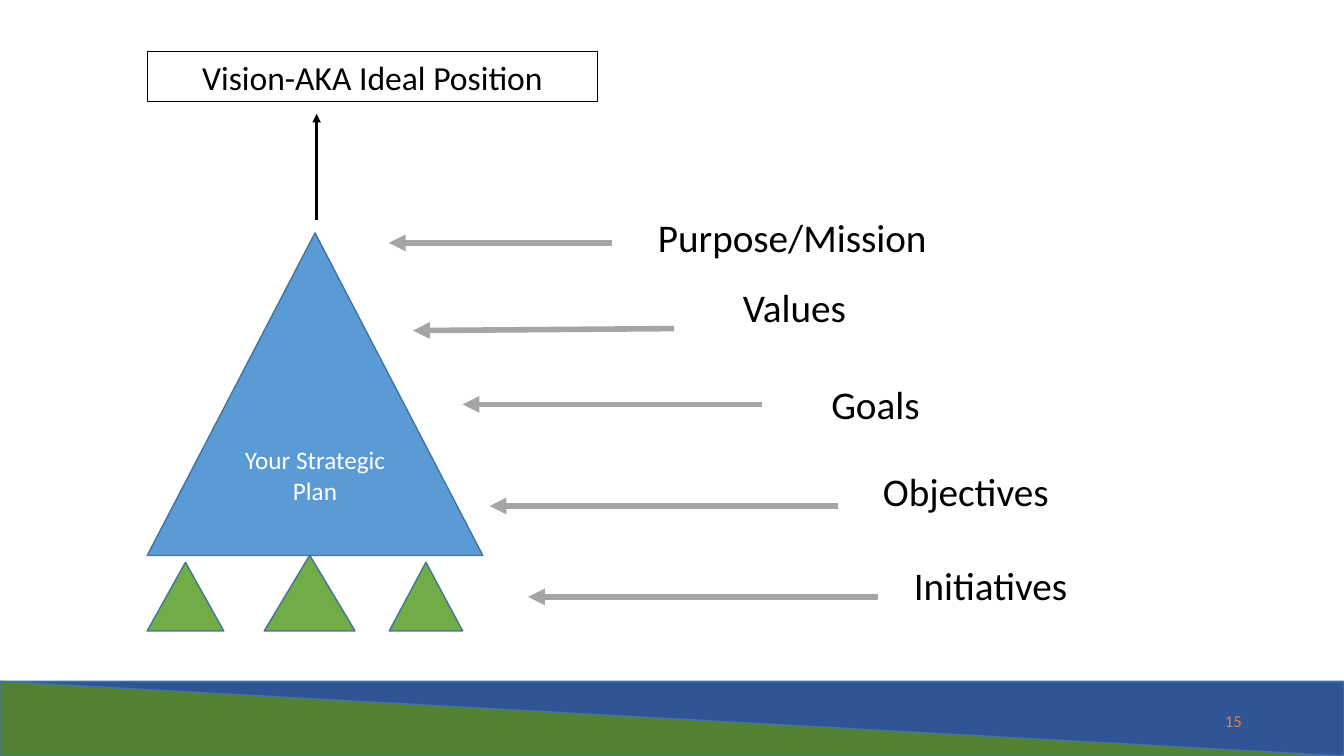
from dataclasses import dataclass

from lxml.etree import SubElement
from pptx import Presentation
from pptx.dml.color import RGBColor
from pptx.enum.shapes import MSO_CONNECTOR as Connector, MSO_SHAPE as Shape
from pptx.enum.text import MSO_ANCHOR as Anchor, MSO_AUTO_SIZE as AutoSize, PP_ALIGN as Align
from pptx.oxml.ns import qn
from pptx.util import Cm, Pt


@dataclass(frozen=True)
class Theme:
    font: str = "Calibri"
    black: str = "000000"
    white: str = "FFFFFF"
    outline: str = "43739E"
    plan: str = "5B9BD5"
    support: str = "70AD47"
    pointer: str = "A5A5A5"
    band_green: str = "548235"
    band_blue: str = "2F5597"
    number: str = "ED7D31"
    label_size: int = 28
    vision_size: int = 24
    plan_size: int = 18
    number_size: int = 12


THEME = Theme()

# label, label left and top, arrow start x and y, arrow end x and y
LEVELS = [
    ("Purpose/Mission", 6.53, 0, 5.62, 0.86, 0, 0.86),
    ("Values", 8.67, 1.75, 7.19, 3.02, 0.61, 3.07),
    ("Goals", 10.9, 4.21, 9.4, 4.93, 1.86, 4.93),
    ("Objectives", 12.2, 6.4, 11.33, 7.49, 2.54, 7.49),
    ("Initiatives", 12.98, 8.76, 12.32, 9.78, 3.51, 9.78),
]

# left, width, height
SUPPORTS = [(0, 1.93, 1.73), (2.95, 2.29, 1.91), (6.1, 1.85, 1.73)]


def write_text(shape, text, size, color, align=Align.LEFT, anchor=Anchor.TOP):
    frame = shape.text_frame
    frame.word_wrap = True
    frame.auto_size = AutoSize.NONE
    frame.vertical_anchor = anchor
    paragraph = frame.paragraphs[0]
    paragraph.text = text
    paragraph.alignment = align
    paragraph.line_spacing = 1.0
    font = paragraph.runs[0].font
    font.name = THEME.font
    font.size = Pt(size)
    font.color.rgb = RGBColor.from_string(color)


def add_text(slide, left, top, width, height, text, **style):
    box = slide.shapes.add_textbox(Cm(left), Cm(top), Cm(width), Cm(height))
    write_text(box, text, **style)


def add_triangle(slide, kind, left, top, width, height, fill):
    triangle = slide.shapes.add_shape(kind, Cm(left), Cm(top), Cm(width), Cm(height))
    triangle.shadow.inherit = False
    triangle.fill.solid()
    triangle.fill.fore_color.rgb = RGBColor.from_string(fill)
    triangle.line.color.rgb = RGBColor.from_string(THEME.outline)
    triangle.line.width = Pt(1)
    return triangle


def add_arrow(slide, start_x, start_y, end_x, end_y, color, weight):
    arrow = slide.shapes.add_connector(
        Connector.STRAIGHT, Cm(start_x), Cm(start_y), Cm(end_x), Cm(end_y))
    arrow.line.color.rgb = RGBColor.from_string(color)
    arrow.line.width = Pt(weight)
    SubElement(arrow.line._get_or_add_ln(), qn("a:tailEnd"), type="triangle")
    SubElement(arrow._element.spPr, qn("a:effectLst"))


def add_footer(slide, left, top, width, height):
    add_triangle(slide, Shape.RIGHT_TRIANGLE, left, top, width, height, THEME.band_green)
    blue = add_triangle(slide, Shape.RIGHT_TRIANGLE, left, top, width, height, THEME.band_blue)
    blue.rotation = 180
    add_text(slide, left + width - 9.94, top + 0.48, 7.62, 1.02, "15",
             size=THEME.number_size, color=THEME.number,
             align=Align.RIGHT, anchor=Anchor.MIDDLE)


def add_vision(slide, left, top, width, height):
    """Frame the title and point an arrow up at it."""
    title = slide.shapes.title
    title.left, title.top, title.width, title.height = (
        Cm(left), Cm(top), Cm(width), Cm(height))
    title.line.color.rgb = RGBColor.from_string(THEME.black)
    title.line.width = Pt(0.75)
    write_text(title, "Vision-AKA Ideal Position", size=THEME.vision_size,
               color=THEME.black, align=Align.CENTER)
    arrow_x = left + 4.27
    add_arrow(slide, arrow_x, top + 4.24, arrow_x, top + 1.57, THEME.black, 2)


def add_pyramid(slide, left, top, width, height):
    """Draw the plan over the row of small triangles that carry it."""
    plan_height = 8.13
    plan = add_triangle(slide, Shape.ISOSCELES_TRIANGLE,
                        left, top, width, plan_height, THEME.plan)
    write_text(plan, "Your Strategic Plan", size=THEME.plan_size, color=THEME.white,
               align=Align.CENTER, anchor=Anchor.MIDDLE)
    for offset, support_width, support_height in SUPPORTS:
        add_triangle(slide, Shape.ISOSCELES_TRIANGLE, left + offset,
                     top + height - support_height,
                     support_width, support_height, THEME.support)


def add_levels(slide, left, top):
    """Name each level of the plan and point an arrow at it."""
    for text, label_x, label_y, start_x, start_y, end_x, end_y in LEVELS:
        add_text(slide, left + label_x, top + label_y, 10.49, 1.75, text,
                 size=THEME.label_size, color=THEME.black)
        add_arrow(slide, left + start_x, top + start_y, left + end_x, top + end_y,
                  THEME.pointer, 4)


def main():
    presentation = Presentation()
    presentation.slide_width = Cm(33.87)
    presentation.slide_height = Cm(19.05)
    title_only = presentation.slide_layouts[5]
    slide = presentation.slides.add_slide(title_only)
    add_footer(slide, 0, 17.17, 33.87, 1.88)
    add_vision(slide, 3.71, 1.3, 11.35, 1.27)
    add_pyramid(slide, 3.71, 5.87, 8.46, 10.03)
    add_levels(slide, 9.8, 5.26)
    presentation.save("out.pptx")


if __name__ == "__main__":
    main()
